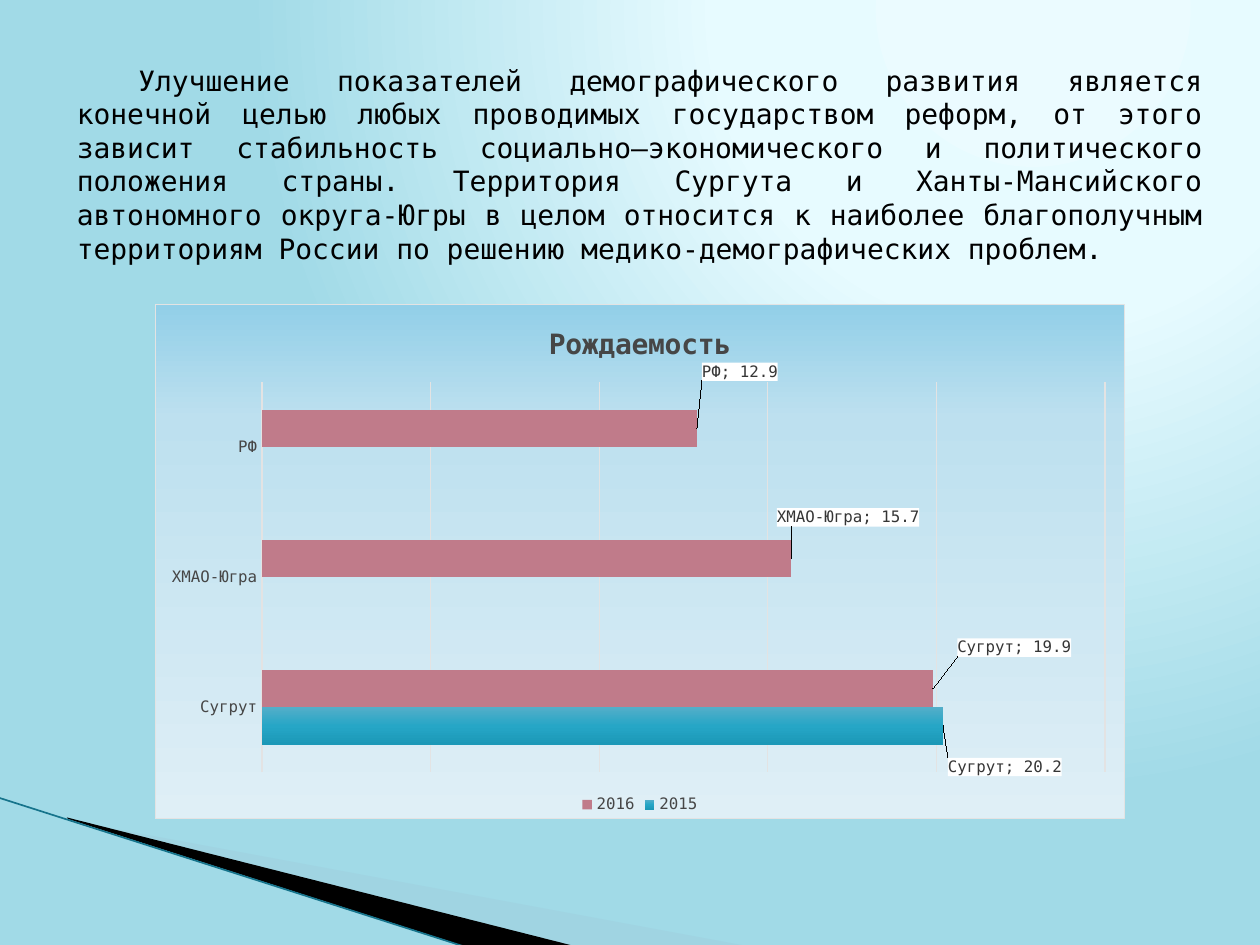
from dataclasses import dataclass

from lxml.etree import SubElement
from pptx import Presentation
from pptx.chart.data import CategoryChartData
from pptx.dml.color import RGBColor
from pptx.enum.chart import XL_CHART_TYPE as ChartType
from pptx.enum.chart import XL_LEGEND_POSITION as LegendPosition
from pptx.enum.chart import XL_TICK_MARK as TickMark
from pptx.enum.shapes import MSO_CONNECTOR as Connector
from pptx.enum.text import MSO_ANCHOR as Anchor
from pptx.enum.text import MSO_AUTO_SIZE as AutoSize
from pptx.enum.text import PP_ALIGN as Align
from pptx.oxml import parse_xml
from pptx.oxml.ns import nsdecls, qn
from pptx.util import Cm, Pt


@dataclass(frozen=True)
class Theme:
    font: str = "DejaVu Sans Mono"
    ink: str = "000000"
    grey: str = "464646"
    label_ink: str = "353535"
    label_fill: str = "FFFFFF"
    rule: str = "E3E3E3"
    pale_wave: str = "A0CBDC"
    wave_line: str = "16748C"
    rose: str = "C07B8A"
    backdrop: tuple = ((0, "EBFBFF"), (40, "E7FBFF"), (100, "A1DAE7"))
    panel: tuple = ((0, "92CFE8"), (22, "BDE0EF"), (100, "DFEFF6"))
    teal: tuple = ((0, "53AEC9"), (50, "26A6C6"), (100, "1B98B7"))
    body_size: int = 16
    title_size: int = 16
    chart_size: int = 10
    small_size: int = 9


THEME = Theme()
DOWNWARD = '<a:lin ang="5400000" scaled="0"/>'
GLOW = '<a:path path="circle"><a:fillToRect l="65000" t="0" r="0" b="98000"/></a:path>'
BODY = (
    "Улучшение показателей демографического развития является конечной целью любых "
    "проводимых государством реформ, от этого зависит стабильность "
    "социально–экономического и политического положения страны. Территория Сургута "
    "и Ханты-Мансийского автономного округа-Югры в целом относится к наиболее "
    "благополучным территориям России по решению медико-демографических проблем."
)
CATEGORIES = ("Сугрут", "ХМАО-Югра", "РФ")
BIRTH_RATES = {"2015": (20.2, None, None), "2016": (19.9, 15.7, 12.9)}
LABEL_SHIFTS = {
    "2015": ((0, 0.08),),
    "2016": ((0.02, -0.08), (-0.02, -0.08), (0, -0.11)),
}


def gradient_xml(stops, direction):
    marks = "".join(
        f'<a:gs pos="{position * 1000}"><a:srgbClr val="{color}"/></a:gs>'
        for position, color in stops
    )
    return (f'<a:gradFill {nsdecls("a")} rotWithShape="1"><a:gsLst>{marks}</a:gsLst>'
            f'{direction}</a:gradFill>')


def style_font(font, size, color, bold=False):
    font.name = THEME.font
    font.size = Pt(size)
    font.bold = bold
    font.color.rgb = RGBColor.from_string(color)


def style_line(line, color, width):
    line.color.rgb = RGBColor.from_string(color)
    line.width = Pt(width)


def set_background(slide):
    slide._element.cSld.insert(0, parse_xml(
        f'<p:bg {nsdecls("p", "a")}><p:bgPr>{gradient_xml(THEME.backdrop, GLOW)}'
        '<a:effectLst/></p:bgPr></p:bg>'
    ))


def add_wave(slide, points, color, opacity=100):
    corners = [(Cm(x), Cm(y)) for x, y in points]
    builder = slide.shapes.build_freeform(*corners[0], scale=1.0)
    builder.add_line_segments(corners[1:], close=True)
    shape = builder.convert_to_shape()
    shape.shadow.inherit = False
    shape.line.fill.background()
    shape.fill.solid()
    shape.fill.fore_color.rgb = RGBColor.from_string(color)
    if opacity < 100:
        color_element = shape._element.spPr.find(".//" + qn("a:srgbClr"))
        SubElement(color_element, qn("a:alpha"), val=str(opacity * 1000))


def add_wave_line(slide, start, end):
    connector = slide.shapes.add_connector(
        Connector.STRAIGHT, *map(Cm, start), *map(Cm, end))
    style_line(connector.line, THEME.wave_line, 0.95)
    SubElement(connector._element.spPr, qn("a:effectLst"))


def add_body(slide):
    shape = slide.shapes.add_textbox(Cm(1.3), Cm(1.12), Cm(23.19), Cm(4.37))
    frame = shape.text_frame
    frame.word_wrap = True
    frame.auto_size = AutoSize.SHAPE_TO_FIT_TEXT
    frame.vertical_anchor = Anchor.MIDDLE
    paragraph = frame.paragraphs[0]
    paragraph.alignment = Align.JUSTIFY
    properties = paragraph._p.get_or_add_pPr()
    properties.set("marL", "0")
    properties.set("indent", str(Cm(1.24)))
    run = paragraph.add_run()
    run.text = BODY
    style_font(run.font, THEME.body_size, THEME.ink)


def add_labels(series, shifts):
    look = (
        '<c:numFmt formatCode="0.0" sourceLinked="0"/>'
        f'<c:spPr><a:solidFill><a:srgbClr val="{THEME.label_fill}"/></a:solidFill></c:spPr>'
        '<c:txPr><a:bodyPr/><a:p><a:pPr>'
        f'<a:defRPr sz="{THEME.small_size * 100}" b="0"><a:solidFill>'
        f'<a:srgbClr val="{THEME.label_ink}"/></a:solidFill>'
        f'<a:latin typeface="{THEME.font}"/></a:defRPr></a:pPr></a:p></c:txPr>'
        '<c:dLblPos val="outEnd"/><c:showLegendKey val="0"/><c:showVal val="1"/>'
        '<c:showCatName val="1"/><c:showSerName val="0"/><c:showPercent val="0"/>'
        '<c:showBubbleSize val="0"/><c:separator>; </c:separator>'
    )
    points = "".join(
        f'<c:dLbl><c:idx val="{index}"/><c:layout><c:manualLayout>'
        f'<c:x val="{x}"/><c:y val="{y}"/></c:manualLayout></c:layout>{look}</c:dLbl>'
        for index, (x, y) in enumerate(shifts)
    )
    series._element.find(qn("c:cat")).addprevious(
        parse_xml(f'<c:dLbls {nsdecls("c", "a")}>{points}{look}</c:dLbls>'))


def style_series(plot):
    for series, color in zip(plot.series, (THEME.ink, THEME.rose)):
        series.format.fill.solid()
        series.format.fill.fore_color.rgb = RGBColor.from_string(color)
        series.invert_if_negative = False
        add_labels(series, LABEL_SHIFTS[series.name])
    properties = plot.series[0]._element.find(qn("c:spPr"))
    properties.replace(properties.find(qn("a:solidFill")),
                       parse_xml(gradient_xml(THEME.teal, DOWNWARD)))


def style_axes(chart):
    categories, values = chart.category_axis, chart.value_axis
    categories.major_tick_mark = categories.minor_tick_mark = TickMark.NONE
    style_font(categories.tick_labels.font, THEME.small_size, THEME.grey)
    style_line(categories.format.line, THEME.rule, 0.75)
    values.minimum_scale, values.maximum_scale, values.major_unit = 0, 25, 5
    values.has_major_gridlines = True
    style_line(values.major_gridlines.format.line, THEME.rule, 0.75)
    values.visible = False


def style_panel(chart):
    chart_element = chart._chartSpace.find(qn("c:chart"))
    chart_element.addnext(parse_xml(
        f'<c:spPr {nsdecls("c", "a")}>{gradient_xml(THEME.panel, DOWNWARD)}'
        f'<a:ln w="{Pt(0.75)}"><a:solidFill><a:srgbClr val="{THEME.rule}"/>'
        '</a:solidFill></a:ln></c:spPr>'
    ))
    plot_area = chart_element.find(qn("c:plotArea"))
    for layout in plot_area.findall(qn("c:layout")):
        plot_area.remove(layout)
    plot_area.insert(0, parse_xml(
        f'<c:layout {nsdecls("c")}><c:manualLayout><c:layoutTarget val="inner"/>'
        '<c:xMode val="edge"/><c:yMode val="edge"/><c:x val="0.11"/><c:y val="0.15"/>'
        '<c:w val="0.87"/><c:h val="0.76"/></c:manualLayout></c:layout>'
    ))


def add_birth_chart(slide):
    data = CategoryChartData()
    data.categories = CATEGORIES
    for year, rates in BIRTH_RATES.items():
        data.add_series(year, rates)
    chart = slide.shapes.add_chart(
        ChartType.BAR_CLUSTERED, Cm(3.12), Cm(6.13), Cm(19.56), Cm(10.39), data).chart
    style_font(chart.font, THEME.chart_size, THEME.ink)
    chart.has_title = True
    run = chart.chart_title.text_frame.paragraphs[0].add_run()
    run.text = "Рождаемость"
    style_font(run.font, THEME.title_size, THEME.grey, bold=True)
    chart.has_legend = True
    chart.legend.position = LegendPosition.BOTTOM
    chart.legend.include_in_layout = False
    style_font(chart.legend.font, THEME.small_size, THEME.grey)
    plot = chart.plots[0]
    plot.gap_width = 150
    plot.vary_by_categories = False
    style_series(plot)
    style_axes(chart)
    style_panel(chart)


def main():
    presentation = Presentation()
    presentation.slide_width, presentation.slide_height = Cm(25.4), Cm(19.05)
    slide = presentation.slides.add_slide(presentation.slide_layouts[6])
    set_background(slide)
    add_wave(slide, ((1.4, 16.54), (15.11, 19.08), (11.58, 19.08), (1.4, 16.51)),
             THEME.pale_wave, opacity=40)
    add_wave(slide, ((1.35, 16.48), (11.61, 19.08), (9.45, 19.1), (1.37, 16.51)), THEME.ink)
    add_wave_line(slide, (-0.03, 16.08), (9.42, 19.1))
    add_body(slide)
    add_birth_chart(slide)
    presentation.save("out.pptx")


if __name__ == "__main__":
    main()
